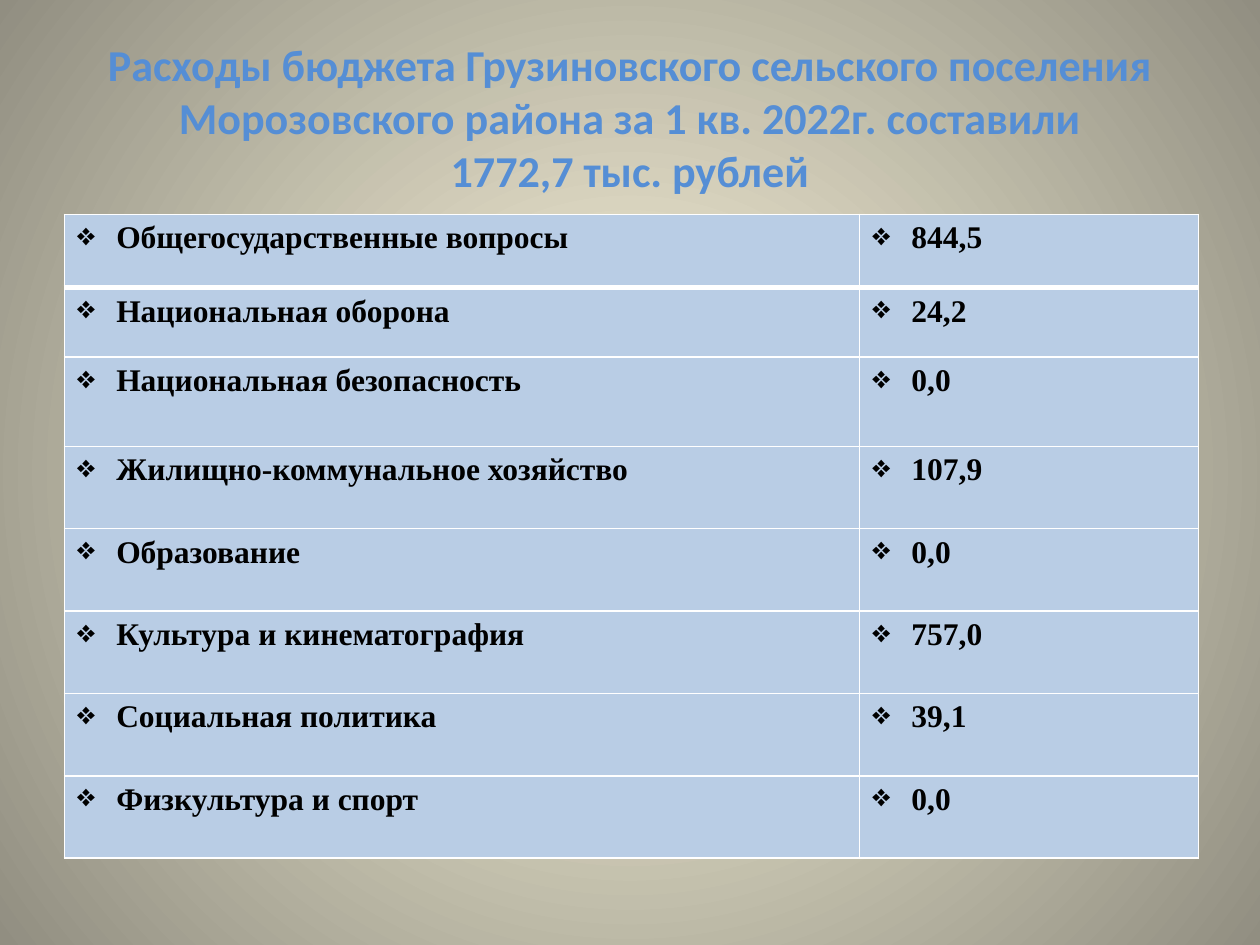
import pptx
import pptx.dml.color
import pptx.enum.text
import pptx.oxml
import pptx.oxml.ns
import pptx.util
from lxml import etree

Cm = pptx.util.Cm
Pt = pptx.util.Pt
qn = pptx.oxml.ns.qn

COLORS = {
    "center": "FCF7DD",
    "edge": "918E81",
    "title": "558ED5",
    "cell": "B9CDE5",
    "border": "FFFFFF",
    "text": "000000",
}
TITLE = ("Расходы бюджета Грузиновского сельского поселения "
         "Морозовского района за 1 кв. 2022г. составили\v1772,7 тыс. рублей")
EXPENSES = [
    ("Общегосударственные вопросы", "844,5"),
    ("Национальная оборона", "24,2"),
    ("Национальная безопасность", "0,0"),
    ("Жилищно-коммунальное хозяйство", "107,9"),
    ("Образование", "0,0"),
    ("Культура и кинематография", "757,0"),
    ("Социальная политика", "39,1"),
    ("Физкультура и спорт", "0,0"),
]
COLUMN_WIDTHS = [16.03, 6.83]
ROW_HEIGHTS = [1.48, 1.4, 1.8] + [1.66] * 5


def rgb(name):
    return pptx.dml.color.RGBColor.from_string(COLORS[name])


def set_font(paragraph, name, size, color):
    font = paragraph.font
    font.name, font.size, font.bold = name, Pt(size), True
    font.color.rgb = rgb(color)


def set_background(slide):
    fill = slide.background.fill
    fill.gradient()
    for stop, name, position in zip(fill.gradient_stops, ("center", "edge"), (0, 1)):
        stop.color.rgb = rgb(name)
        stop.position = position
    # Turn the linear gradient into a circular one
    gradient = slide.element.find(".//" + qn("a:gradFill"))
    gradient.remove(gradient.find(qn("a:lin")))
    circle = etree.SubElement(gradient, qn("a:path"), {"path": "circle"})
    sides = {side: "50000" for side in "ltrb"}
    etree.SubElement(circle, qn("a:fillToRect"), sides)


def add_title(slide):
    title = slide.shapes.title
    title.left, title.top = Cm(1.27), Cm(0.76)
    title.width, title.height = Cm(22.86), Cm(3.18)
    frame = title.text_frame
    frame.word_wrap = True
    frame.auto_size = pptx.enum.text.MSO_AUTO_SIZE.NONE
    frame.vertical_anchor = pptx.enum.text.MSO_ANCHOR.MIDDLE
    paragraph = frame.paragraphs[0]
    paragraph.text = TITLE
    paragraph.alignment = pptx.enum.text.PP_ALIGN.CENTER
    set_font(paragraph, "Calibri", 25.2, "title")


def add_bullet(paragraph):
    properties = paragraph._p.get_or_add_pPr()
    indent = Cm(0.79)
    properties.set("marL", str(indent))
    properties.set("indent", str(-indent))
    bullet = pptx.oxml.parse_xml(
        f'<a:buChar {pptx.oxml.ns.nsdecls("a")} char="❖"/>')
    properties.insert_element_before(bullet, "a:tabLst", "a:defRPr", "a:extLst")


def set_borders(cell, widths):
    properties = cell._tc.get_or_add_tcPr()
    for index, (side, width) in enumerate(widths.items()):
        line = pptx.oxml.parse_xml(
            f'<a:ln{side} {pptx.oxml.ns.nsdecls("a")} w="{Pt(width)}"><a:solidFill>'
            f'<a:srgbClr val="{COLORS["border"]}"/></a:solidFill></a:ln{side}>')
        properties.insert(index, line)


def format_cell(cell, text, row):
    cell.fill.solid()
    cell.fill.fore_color.rgb = rgb("cell")
    paragraph = cell.text_frame.paragraphs[0]
    paragraph.text = text
    set_font(paragraph, "Times New Roman", 18, "text")
    add_bullet(paragraph)
    # A thick line separates the first row from the rest
    set_borders(cell, {"L": 1, "R": 1, "T": 3 if row == 1 else 1,
                       "B": 3 if row == 0 else 1})


def add_expense_table(slide):
    frame = slide.shapes.add_table(
        len(EXPENSES), len(COLUMN_WIDTHS), Cm(1.3), Cm(4.32),
        Cm(sum(COLUMN_WIDTHS)), Cm(sum(ROW_HEIGHTS)))
    table = frame.table
    table.horz_banding = False
    for column, width in zip(table.columns, COLUMN_WIDTHS):
        column.width = Cm(width)
    for row, (values, height) in enumerate(zip(EXPENSES, ROW_HEIGHTS)):
        table.rows[row].height = Cm(height)
        for column, text in enumerate(values):
            format_cell(table.cell(row, column), text, row)


def main():
    presentation = pptx.Presentation()
    presentation.slide_width, presentation.slide_height = Cm(25.4), Cm(19.05)
    slide = presentation.slides.add_slide(presentation.slide_layouts[5])
    set_background(slide)
    add_title(slide)
    add_expense_table(slide)
    presentation.save("out.pptx")


if __name__ == "__main__":
    main()
